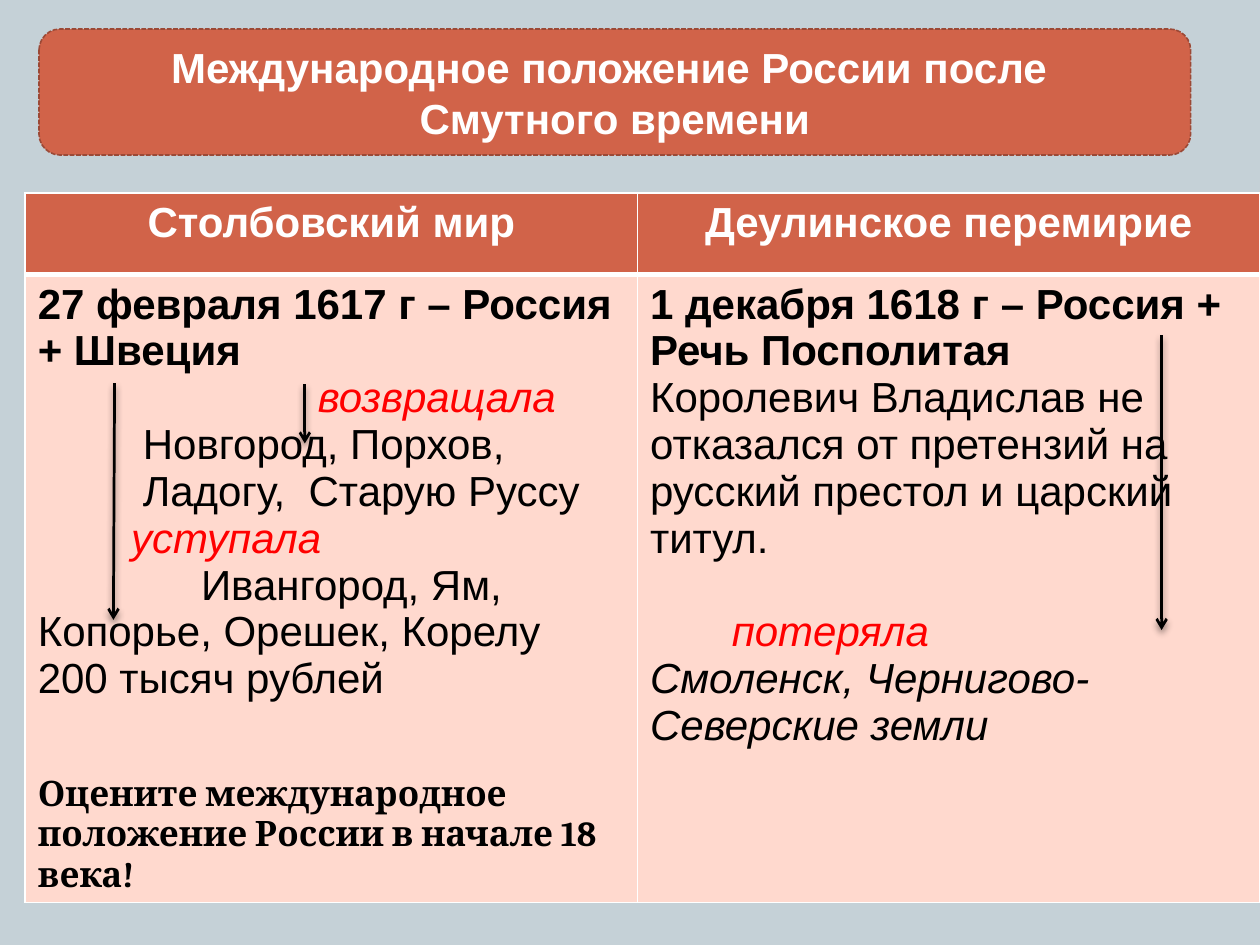
"""Build a slide on the peace treaties after the Time of Troubles."""
from dataclasses import dataclass

from lxml.etree import SubElement
from pptx import Presentation
from pptx.dml.color import RGBColor
from pptx.enum.dml import MSO_LINE
from pptx.enum.shapes import MSO_CONNECTOR, MSO_SHAPE
from pptx.enum.text import MSO_ANCHOR, PP_ALIGN
from pptx.oxml.ns import qn
from pptx.util import Pt


@dataclass(frozen=True)
class Theme:
    back: str = "C5D1D7"
    brick: str = "D16349"
    edge: str = "9B4936"
    blush: str = "FFD9CE"
    white: str = "FFFFFF"
    black: str = "000000"
    red: str = "FF0000"
    font: str = "Arial"
    serif: str = "Cambria"
    size: float = 24
    small: float = 20


@dataclass(frozen=True)
class Arrow:
    x: float
    top: float
    end: float
    low: float


@dataclass(frozen=True)
class Line:
    text: str
    color: str = Theme.black
    bold: bool = False
    slant: bool = False
    indent: float = 0
    gap: float = 0
    font: str = Theme.font
    size: float = Theme.size


THEME = Theme()
LEFT = [
    Line("27 февраля 1617 г – Россия + Швеция", bold=True),
    Line("возвращала", THEME.red, slant=True, indent=160),
    Line("Новгород, Порхов,", indent=60),
    Line("Ладогу,  Старую Руссу", indent=60),
    Line("уступала", THEME.red, slant=True, indent=53.3),
    Line("Ивангород, Ям, Копорье, Орешек, Корелу", indent=93.3),
    Line("200 тысяч рублей"),
    Line("Оцените международное положение России в начале 18 века!",
         bold=True, gap=41.4, font=THEME.serif, size=THEME.small),
]
RIGHT = [
    Line("1 декабря 1618 г – Россия + Речь Посполитая", bold=True),
    Line("Королевич Владислав не отказался от претензий на русский "
         "престол и царский титул."),
    Line("потеряла", THEME.red, slant=True, indent=46.7, gap=26.8),
    Line("Смоленск, Чернигово-Северские земли", slant=True),
]
HEADS = ["Столбовский мир", "Деулинское перемирие"]
TITLE = ["Международное положение России после ", "Смутного времени"]
ARROWS = [
    Arrow(65.5, 218.9, 64.8, 354.2),
    Arrow(174.2, 219.6, 174.2, 253.4),
    Arrow(663.8, 191.5, 663.8, 360),
]


def rgb(code: str) -> RGBColor:
    return RGBColor.from_string(code)


def paint(fill, code: str) -> None:
    fill.solid()
    fill.fore_color.rgb = rgb(code)


def write(frame, lines: list[Line], *, align=PP_ALIGN.LEFT) -> None:
    frame.word_wrap = True
    for i, line in enumerate(lines):
        para = frame.add_paragraph() if i else frame.paragraphs[0]
        para.alignment = align
        para.space_before = Pt(line.gap)
        props = para._p.get_or_add_pPr()
        props.set("marL", "0")
        props.set("indent", str(Pt(line.indent)))
        run = para.add_run()
        run.text = line.text
        font = run.font
        font.name, font.size = line.font, Pt(line.size)
        font.bold, font.italic = line.bold, line.slant
        font.color.rgb = rgb(line.color)


def heads(texts: list[str]) -> list[Line]:
    return [Line(text, THEME.white, bold=True) for text in texts]


def border(cell, **widths: float) -> None:
    props = cell._tc.get_or_add_tcPr()
    for side, width in widths.items():
        edge = SubElement(props, qn(f"a:ln{side}"), w=str(Pt(width)))
        fill = SubElement(edge, qn("a:solidFill"))
        SubElement(fill, qn("a:srgbClr"), val=THEME.white)


def draw_table(slide) -> None:
    wide, high = [349.9, 355.7], [46.8, 351.4]
    table = slide.shapes.add_table(
        2, 2, Pt(14.4), Pt(110.2), Pt(sum(wide)), Pt(sum(high))).table
    for col, width in zip(table.columns, wide):
        col.width = Pt(width)
    for row, height in zip(table.rows, high):
        row.height = Pt(height)
    for i, (head, body) in enumerate(zip(HEADS, [LEFT, RIGHT])):
        top, low = table.cell(0, i), table.cell(1, i)
        border(top, L=1, R=1, T=1, B=3)
        border(low, L=1, R=1, T=3, B=1)
        paint(top.fill, THEME.brick)
        paint(low.fill, THEME.blush)
        write(top.text_frame, heads([head]), align=PP_ALIGN.CENTER)
        write(low.text_frame, body)


def draw_arrow(slide, arrow: Arrow) -> None:
    line = slide.shapes.add_connector(
        MSO_CONNECTOR.STRAIGHT, Pt(arrow.x), Pt(arrow.top),
        Pt(arrow.end), Pt(arrow.low))
    line.line.color.rgb = rgb(THEME.black)
    line.line.width = Pt(1.57)
    SubElement(line.line._get_or_add_ln(), qn("a:tailEnd"), type="arrow")
    glow = SubElement(line._element.spPr, qn("a:effectLst"))
    shade = SubElement(glow, qn("a:outerShdw"), blurRad=str(Pt(4)),
                       dist=str(Pt(2)), dir="5400000", rotWithShape="0")
    tone = SubElement(shade, qn("a:srgbClr"), val=THEME.black)
    SubElement(tone, qn("a:alpha"), val="45000")


def draw_title(slide) -> None:
    box = slide.shapes.add_shape(
        MSO_SHAPE.ROUNDED_RECTANGLE, Pt(22.3), Pt(16.6), Pt(658.1), Pt(72))
    box.shadow.inherit = False
    paint(box.fill, THEME.brick)
    box.line.color.rgb = rgb(THEME.edge)
    box.line.width = Pt(0.9)
    box.line.dash_style = MSO_LINE.SQUARE_DOT
    box.text_frame.vertical_anchor = MSO_ANCHOR.MIDDLE
    write(box.text_frame, heads(TITLE), align=PP_ALIGN.CENTER)


def main() -> None:
    deck = Presentation()
    deck.slide_width, deck.slide_height = Pt(720), Pt(540)
    slide = deck.slides.add_slide(deck.slide_layouts[6])
    paint(slide.background.fill, THEME.back)
    draw_table(slide)
    for arrow in ARROWS:
        draw_arrow(slide, arrow)
    draw_title(slide)
    deck.save("out.pptx")


if __name__ == "__main__":
    main()
